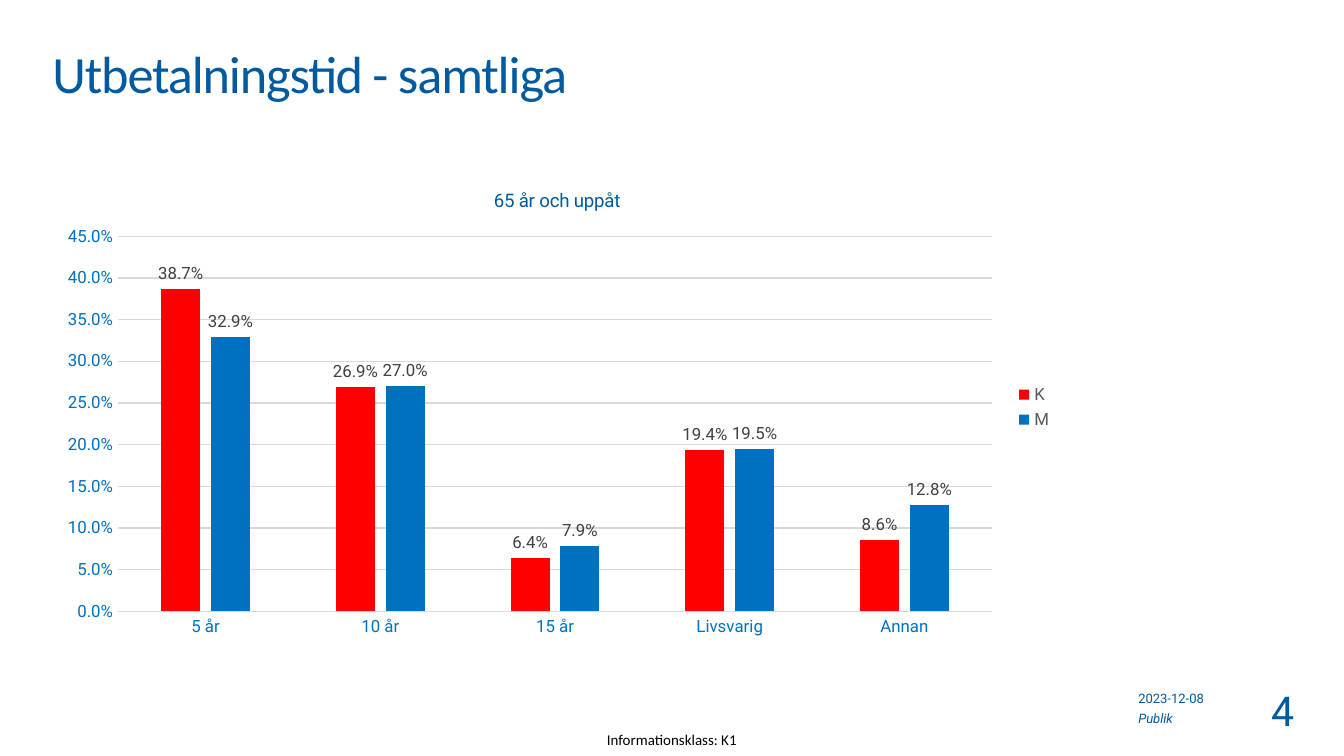
from lxml import etree
from pptx import Presentation
from pptx.chart.data import CategoryChartData
from pptx.dml.color import RGBColor
from pptx.enum.chart import XL_CHART_TYPE, XL_LABEL_POSITION, XL_LEGEND_POSITION, XL_TICK_MARK
from pptx.enum.text import MSO_ANCHOR, PP_ALIGN
from pptx.oxml.ns import qn
from pptx.util import Inches, Pt

THEME = {
    "heading_font": "Calibri", "body_font": "Roboto",
    "navy": "005AA0", "blue": "0070C0", "red": "FF0000", "black": "000000",
    "grid": "D9D9D9", "legend": "595959", "label": "404040",
    "title_size": 28, "number_size": 22, "chart_title_size": 10,
    "chart_size": 9, "class_size": 8, "footer_size": 7,
}
PERCENT = "0.0%"
SLIDE_WIDTH = Inches(10)
SLIDE_HEIGHT = SLIDE_WIDTH * 9 // 16

TEXTS = [
    ("Publik", (8.47, 5.24, 0.87, 0.16),
     dict(size="footer_size", italic=True, anchor=MSO_ANCHOR.BOTTOM)),
    ("Informationsklass: K1", (4.38, 5.38, 1.24, 0.25),
     dict(size="class_size", font="heading_font", color="black",
          align=PP_ALIGN.CENTER, anchor=MSO_ANCHOR.MIDDLE)),
    ("Utbetalningstid - samtliga", (0.39, 0.4, 9.22, 0.62),
     dict(size="title_size", font="heading_font", line_spacing=0.8, tracking=-0.6)),
    ("2023-12-08", (8.47, 5.14, 0.73, 0.16), dict(size="footer_size")),
    ("4", (8.99, 5.1, 0.64, 0.31),
     dict(size="number_size", align=PP_ALIGN.RIGHT, wrap=False)),
]

CHART_BOX = (0.36, 1.25, 7.57, 3.56)
PLOT_BOX = (0.88, 1.76, 6.5, 2.79)
CHART_TITLE = "65 år och uppåt"
CATEGORIES = ["5 år", "10 år", "15 år", "Livsvarig", "Annan"]
SERIES = [
    ("K", "red", [0.387, 0.269, 0.064, 0.194, 0.086]),
    ("M", "blue", [0.329, 0.27, 0.079, 0.195, 0.128]),
]


def theme_color(name):
    return RGBColor.from_string(THEME[name])


def style_font(font, size, color, name="body_font"):
    font.size = Pt(THEME[size])
    font.name = THEME[name]
    font.color.rgb = theme_color(color)
    font.bold = False


def add_text(slide, text, box, *, size, font="body_font", color="navy", italic=False,
             align=PP_ALIGN.LEFT, anchor=MSO_ANCHOR.TOP, wrap=True,
             line_spacing=None, tracking=None):
    shape = slide.shapes.add_textbox(*map(Inches, box))
    frame = shape.text_frame
    frame.word_wrap = wrap
    frame.vertical_anchor = anchor
    frame.margin_left = frame.margin_right = frame.margin_top = frame.margin_bottom = 0
    paragraph = frame.paragraphs[0]
    paragraph.alignment = align
    paragraph.line_spacing = line_spacing
    run = paragraph.add_run()
    run.text = text
    style_font(run.font, size, color, font)
    run.font.italic = italic
    if tracking:
        run.font._element.set("spc", str(round(tracking * 100)))


def set_plot_layout(chart):
    """Place the inner plot area at PLOT_BOX, as fractions of CHART_BOX."""
    left, top, width, height = CHART_BOX
    plot_left, plot_top, plot_width, plot_height = PLOT_BOX
    settings = {
        "layoutTarget": "inner", "xMode": "edge", "yMode": "edge",
        "x": (plot_left - left) / width, "y": (plot_top - top) / height,
        "w": plot_width / width, "h": plot_height / height,
    }
    plot_area = chart._chartSpace.chart.plotArea
    for old in plot_area.findall(qn("c:layout")):
        plot_area.remove(old)
    layout = etree.Element(qn("c:layout"))
    plot_area.insert(0, layout)
    manual = etree.SubElement(layout, qn("c:manualLayout"))
    for tag, value in settings.items():
        etree.SubElement(manual, qn(f"c:{tag}")).set("val", str(value))


def style_axes(chart):
    for axis in (chart.category_axis, chart.value_axis):
        axis.major_tick_mark = axis.minor_tick_mark = XL_TICK_MARK.NONE
        style_font(axis.tick_labels.font, "chart_size", "blue")
    value_axis = chart.value_axis
    value_axis.minimum_scale, value_axis.maximum_scale = 0, 0.45
    value_axis.major_unit = 0.05
    value_axis.tick_labels.number_format = PERCENT
    value_axis.tick_labels.number_format_is_linked = False
    value_axis.format.line.fill.background()
    for line in (chart.category_axis.format.line, value_axis.major_gridlines.format.line):
        line.color.rgb = theme_color("grid")
        line.width = Pt(0.75)


def add_payout_chart(slide):
    data = CategoryChartData(number_format=PERCENT)
    data.categories = CATEGORIES
    for name, _, values in SERIES:
        data.add_series(name, values)
    chart = slide.shapes.add_chart(
        XL_CHART_TYPE.COLUMN_CLUSTERED, *map(Inches, CHART_BOX), data).chart
    style_font(chart.font, "chart_title_size", "black")

    chart.has_title = True
    title = chart.chart_title
    title.include_in_layout = False
    run = title.text_frame.paragraphs[0].add_run()
    run.text = CHART_TITLE
    style_font(run.font, "chart_title_size", "navy")

    chart.has_legend = True
    chart.legend.position = XL_LEGEND_POSITION.RIGHT
    chart.legend.include_in_layout = False
    style_font(chart.legend.font, "chart_size", "legend")

    plot = chart.plots[0]
    plot.gap_width, plot.overlap = 219, -27
    plot.vary_by_categories = False
    for series, (_, color, _) in zip(plot.series, SERIES):
        series.format.fill.solid()
        series.format.fill.fore_color.rgb = theme_color(color)
        labels = series.data_labels
        labels.show_value = True
        labels.position = XL_LABEL_POSITION.OUTSIDE_END
        labels.number_format = PERCENT
        labels.number_format_is_linked = False
        style_font(labels.font, "chart_size", "label")
    style_axes(chart)
    set_plot_layout(chart)


def main():
    presentation = Presentation()
    presentation.slide_width, presentation.slide_height = SLIDE_WIDTH, SLIDE_HEIGHT
    slide = presentation.slides.add_slide(presentation.slide_layouts[6])
    for text, box, options in TEXTS:
        add_text(slide, text, box, **options)
    add_payout_chart(slide)
    presentation.save("out.pptx")


if __name__ == "__main__":
    main()
